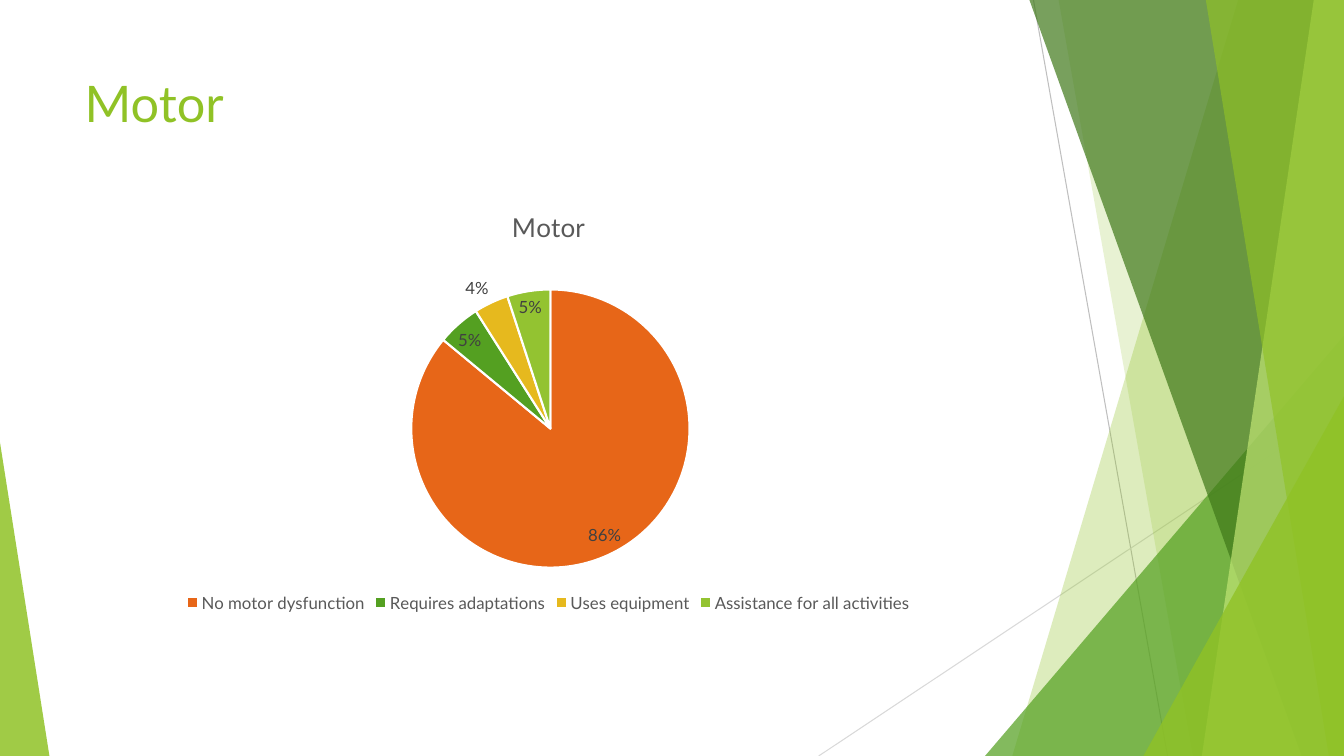
from lxml import etree
from pptx import Presentation
from pptx.chart.data import CategoryChartData
from pptx.dml.color import RGBColor
from pptx.enum.chart import XL_CHART_TYPE, XL_LABEL_POSITION, XL_LEGEND_POSITION
from pptx.enum.shapes import MSO_CONNECTOR, MSO_SHAPE
from pptx.enum.text import MSO_ANCHOR, PP_ALIGN
from pptx.oxml.ns import qn
from pptx.util import Inches, Pt

PIE = XL_CHART_TYPE.PIE
BEST_FIT = XL_LABEL_POSITION.BEST_FIT
BOTTOM = XL_LEGEND_POSITION.BOTTOM
STRAIGHT = MSO_CONNECTOR.STRAIGHT
TRIANGLE = MSO_SHAPE.ISOSCELES_TRIANGLE
TOP = MSO_ANCHOR.TOP
LEFT = PP_ALIGN.LEFT

W, H = 13.33, 7.5
MARGIN, CONTENT_W = 0.74, 9.4
FONT = "Lato"
COLORS = {
    "lime": "90C226", "green": "54A021", "forest": "3F7819", "pale": "C0E474",
    "orange": "E76618", "gold": "E6B91E", "leaf": "93C331", "white": "FFFFFF",
    "gray": "BFBFBF", "light gray": "D9D9D9", "text": "595959", "label": "404040",
}


def color(name):
    return RGBColor.from_string(COLORS[name])


def paint(sp, name, opacity):
    """Fill a shape with a partly transparent colour, without outline or shadow."""
    sp.shadow.inherit = False
    sp.line.fill.background()
    sp.fill.solid()
    sp.fill.fore_color.rgb = color(name)
    rgb = sp.element.spPr.find(qn("a:solidFill"))[0]
    etree.SubElement(rgb, qn("a:alpha")).set("val", str(opacity * 1000))


prs = Presentation()
prs.slide_width, prs.slide_height = Inches(W), Inches(H)
s = prs.slides.add_slide(prs.slide_layouts[5])

# Thin lines behind the ribbons
for x1, y1, x2, y2, name in [
    (10.25, 0, 11.58, H, "gray"),
    (W, 4.03, 8.12, H, "light gray"),
]:
    line = s.shapes.add_connector(STRAIGHT, Inches(x1), Inches(y1), Inches(x2), Inches(y2))
    line.line.color.rgb = color(name)
    line.line.width = Pt(0.75)
    etree.SubElement(line.element.spPr, qn("a:effectLst"))

# Ribbons reach the right edge: (top x, bottom x); triangles: (left, top, width, tip)
for kind, place, name, opacity in [
    ("ribbon", (12.28, 10.04), "lime", 30),
    ("ribbon", (10.5, 11.83), "lime", 20),
    ("triangle", (9.77, 3.33, 3.56, 1), "green", 72),
    ("ribbon", (10.21, 12.91), "forest", 70),
    ("ribbon", (13.03, 11.92), "pale", 70),
    ("ribbon", (11.96, 13.18), "lime", 65),
    ("triangle", (11.34, 3.93, 1.99, 1), "lime", 80),
    ("triangle", (0, 4.39, 0.49, 0), "lime", 85),
]:
    if kind == "ribbon":
        top_x, bottom_x = place
        outline = s.shapes.build_freeform(Inches(top_x), 0)
        outline.add_line_segments(
            [(Inches(x), Inches(y)) for x, y in [(W, 0), (W, H), (bottom_x, H)]], close=True)
        sp = outline.convert_to_shape()
    else:
        x, y, width, tip = place
        sp = s.shapes.add_shape(TRIANGLE, Inches(x), Inches(y), Inches(width), Inches(H - y))
        sp.adjustments[0] = tip
    paint(sp, name, opacity)

# Title
title = s.shapes.title
title.element.getparent().append(title.element)
title.left, title.top = Inches(MARGIN), Inches(0.67)
title.width, title.height = Inches(CONTENT_W), Inches(1.44)
tf = title.text_frame
tf.vertical_anchor = TOP
p = tf.paragraphs[0]
p.alignment = LEFT
r = p.add_run()
r.text = "Motor"
r.font.size, r.font.name = Pt(36), FONT
r.font.color.rgb = color("lime")

# Pie chart
slices = [
    ("No motor dysfunction", 86, "orange"),
    ("Requires adaptations", 5, "green"),
    ("Uses equipment", 4, "gold"),
    ("Assistance for all activities", 5, "leaf"),
]
data = CategoryChartData()
data.categories = [category for category, _, _ in slices]
data.add_series("Motor", [value for _, value, _ in slices])
chart = s.shapes.add_chart(
    PIE, Inches(MARGIN), Inches(1.88), Inches(CONTENT_W), Inches(4.24), data).chart
chart.font.name, chart.font.size = FONT, Pt(10)

chart.has_title = True
r = chart.chart_title.text_frame.paragraphs[0].add_run()
r.text = "Motor"
r.font.size, r.font.name, r.font.bold = Pt(18.6), FONT, False
r.font.color.rgb = color("text")

chart.has_legend = True
legend = chart.legend
legend.position = BOTTOM
legend.include_in_layout = False
legend.font.size, legend.font.name = Pt(12), FONT
legend.font.color.rgb = color("text")

plot = chart.plots[0]
plot.vary_by_categories = True
for i, (_, _, name) in enumerate(slices):
    wedge = plot.series[0].points[i].format
    wedge.fill.solid()
    wedge.fill.fore_color.rgb = color(name)
    wedge.line.color.rgb = color("white")
    wedge.line.width = Pt(1.5)

labels = plot.series[0].data_labels
labels.show_percentage, labels.show_value = True, False
labels.number_format, labels.number_format_is_linked = "0%", False
labels.position = BEST_FIT
labels.font.size, labels.font.name = Pt(12), FONT
labels.font.color.rgb = color("label")

prs.save("out.pptx")
